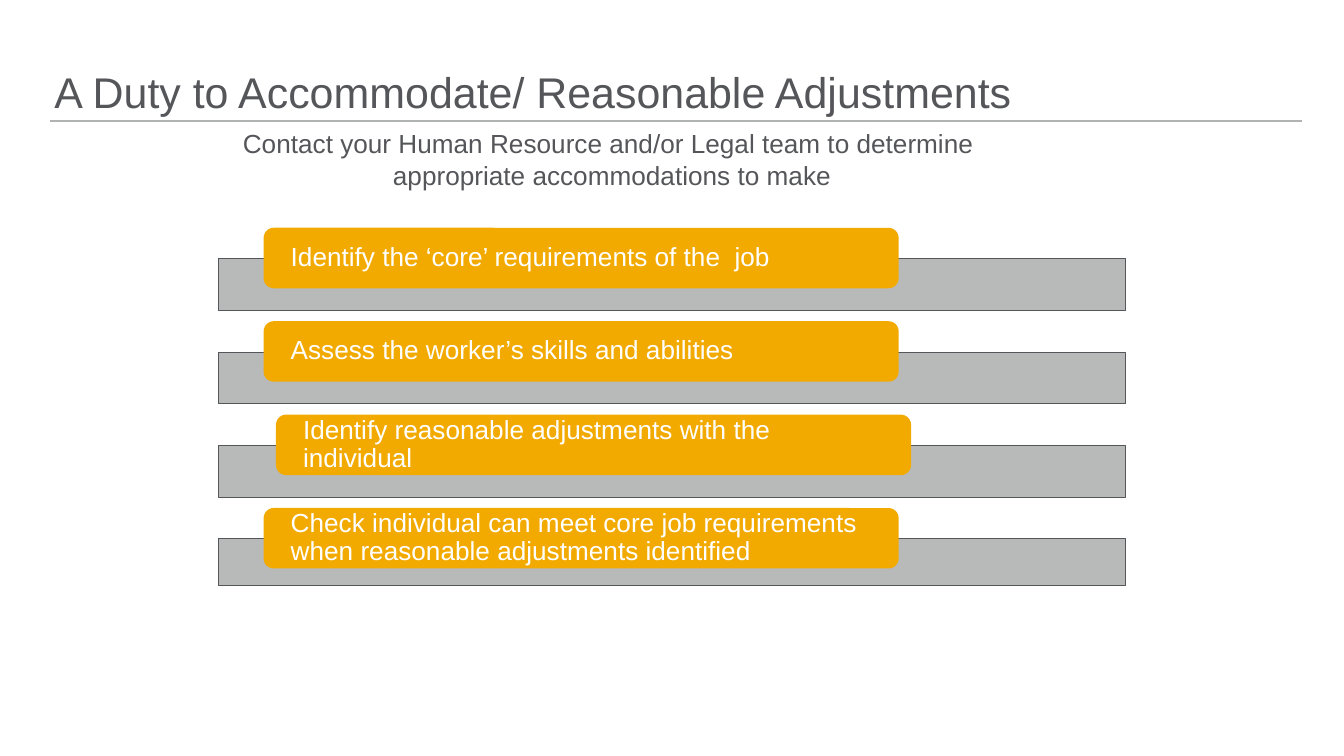
from dataclasses import dataclass

from lxml import etree
from pptx import Presentation
from pptx.dml.color import RGBColor
from pptx.enum.shapes import MSO_CONNECTOR, MSO_SHAPE
from pptx.enum.text import MSO_ANCHOR, MSO_AUTO_SIZE, PP_ALIGN
from pptx.oxml.ns import qn
from pptx.shapes.autoshape import Shape
from pptx.shapes.shapetree import GroupShapes
from pptx.text.text import TextFrame
from pptx.util import Inches, Pt

RECTANGLE = MSO_SHAPE.RECTANGLE
ROUNDED = MSO_SHAPE.ROUNDED_RECTANGLE
STRAIGHT = MSO_CONNECTOR.STRAIGHT
TOP, MIDDLE, BOTTOM = MSO_ANCHOR.TOP, MSO_ANCHOR.MIDDLE, MSO_ANCHOR.BOTTOM
LEFT, CENTER = PP_ALIGN.LEFT, PP_ALIGN.CENTER
NO_FIT = MSO_AUTO_SIZE.NONE

WHITE = RGBColor(0xFF, 0xFF, 0xFF)
SLATE = RGBColor(0x55, 0x56, 0x5A)
SILVER = RGBColor(0xB1, 0xB3, 0xB3)
AMBER = RGBColor(0xF2, 0xAA, 0x00)

COLUMNS, ROWS = 100, 56.25
CELL = Inches(0.1)
BAR_TOP, TAB_TOP = 19.25, 16.95
STEP_PITCH = 6.95


@dataclass(frozen=True)
class Frame:
    column: float
    row: float
    width: float
    height: float

    def lengths(self) -> list[int]:
        return [round(cells * CELL) for cells in
                (self.column, self.row, self.width, self.height)]


@dataclass(frozen=True)
class Step:
    text: str
    tab_column: float = 19.62
    bar_height: float = 3.85


STEPS = [
    Step("Identify the ‘core’ requirements of the  job"),
    Step("Assess the worker’s skills and abilities"),
    Step("Identify reasonable adjustments with the individual", tab_column=20.54),
    Step("Check individual can meet core job requirements "
         "when reasonable adjustments identified", bar_height=3.5),
]


def apply(target: object, values: dict) -> None:
    for name, value in values.items():
        setattr(target, name, value)


def place(shape: Shape, frame: Frame) -> None:
    apply(shape, dict(zip(("left", "top", "width", "height"), frame.lengths())))


def write(box: TextFrame, lines: list[str], size: float, color: RGBColor,
          box_format: dict, para_format: dict) -> None:
    apply(box, {"auto_size": NO_FIT, **box_format})
    for index, line in enumerate(lines):
        para = box.paragraphs[0] if index == 0 else box.add_paragraph()
        apply(para, {"space_before": Pt(0), **para_format})
        span = para.add_run()
        span.text = line
        apply(span.font, {"name": "Arial", "size": Pt(size)})
        span.font.color.rgb = color


def margins(side: float, vertical: float) -> dict:
    return {"margin_left": Inches(side), "margin_right": Inches(side),
            "margin_top": Inches(vertical), "margin_bottom": Inches(vertical)}


def add_block(shapes: GroupShapes, kind: int, frame: Frame, fill: RGBColor) -> Shape:
    block = shapes.add_shape(kind, *frame.lengths())
    block.shadow.inherit = False
    block.fill.solid()
    block.fill.fore_color.rgb = fill
    return block


def add_step(shapes: GroupShapes, index: int, step: Step) -> None:
    offset = index * STEP_PITCH
    bar = add_block(shapes, RECTANGLE,
                    Frame(16.25, BAR_TOP + offset, 67.5, step.bar_height), SILVER)
    color = bar.fill._xPr.find(".//" + qn("a:srgbClr"))
    etree.SubElement(color, qn("a:alpha"), val="90000")
    bar.line.color.rgb = SLATE
    bar.line.width = Pt(0.5)

    tab = add_block(shapes, ROUNDED,
                    Frame(step.tab_column, TAB_TOP + offset, 47.25, 4.5), AMBER)
    tab.line.fill.background()
    write(tab.text_frame, [step.text], 14, WHITE,
          {"word_wrap": True, "vertical_anchor": MIDDLE, **margins(0.18, 0)},
          {"alignment": LEFT, "line_spacing": 0.9})


def main() -> None:
    deck = Presentation()
    apply(deck, {"slide_width": round(COLUMNS * CELL),
                 "slide_height": round(ROWS * CELL)})
    page = deck.slides.add_slide(deck.slide_layouts[1])

    title, body = page.shapes.title, page.placeholders[1]
    place(title, Frame(3.35, 5.55, 79.5, 3.6))
    write(title.text_frame, ["A Duty to Accommodate/ Reasonable Adjustments"], 23, SLATE,
          {"word_wrap": True, "vertical_anchor": BOTTOM, **margins(0.07, 0.04)},
          {"alignment": LEFT, "line_spacing": 0.9})

    place(body, Frame(16, 9.5, 59.1, 6))
    write(body.text_frame,
          ["Contact your Human Resource and/or Legal team to determine ",
           "appropriate accommodations to make"], 14, SLATE,
          {"word_wrap": False, "vertical_anchor": TOP, **margins(0, 0)},
          {"alignment": CENTER})
    for para in body.text_frame.paragraphs:
        properties = para._p.get_or_add_pPr()
        properties.set("marL", "0")
        properties.set("indent", "0")
        etree.SubElement(properties, qn("a:buNone"))

    rule = page.shapes.add_connector(
        STRAIGHT, *[round(cells * CELL) for cells in (3.75, 9, 96.9, 9)])
    rule.line.color.rgb = SILVER
    rule.line.width = Pt(1)
    etree.SubElement(rule._element.spPr, qn("a:effectLst"))

    steps = page.shapes.add_group_shape()
    for index, step in enumerate(STEPS):
        add_step(steps.shapes, index, step)

    deck.save("out.pptx")


if __name__ == "__main__":
    main()
